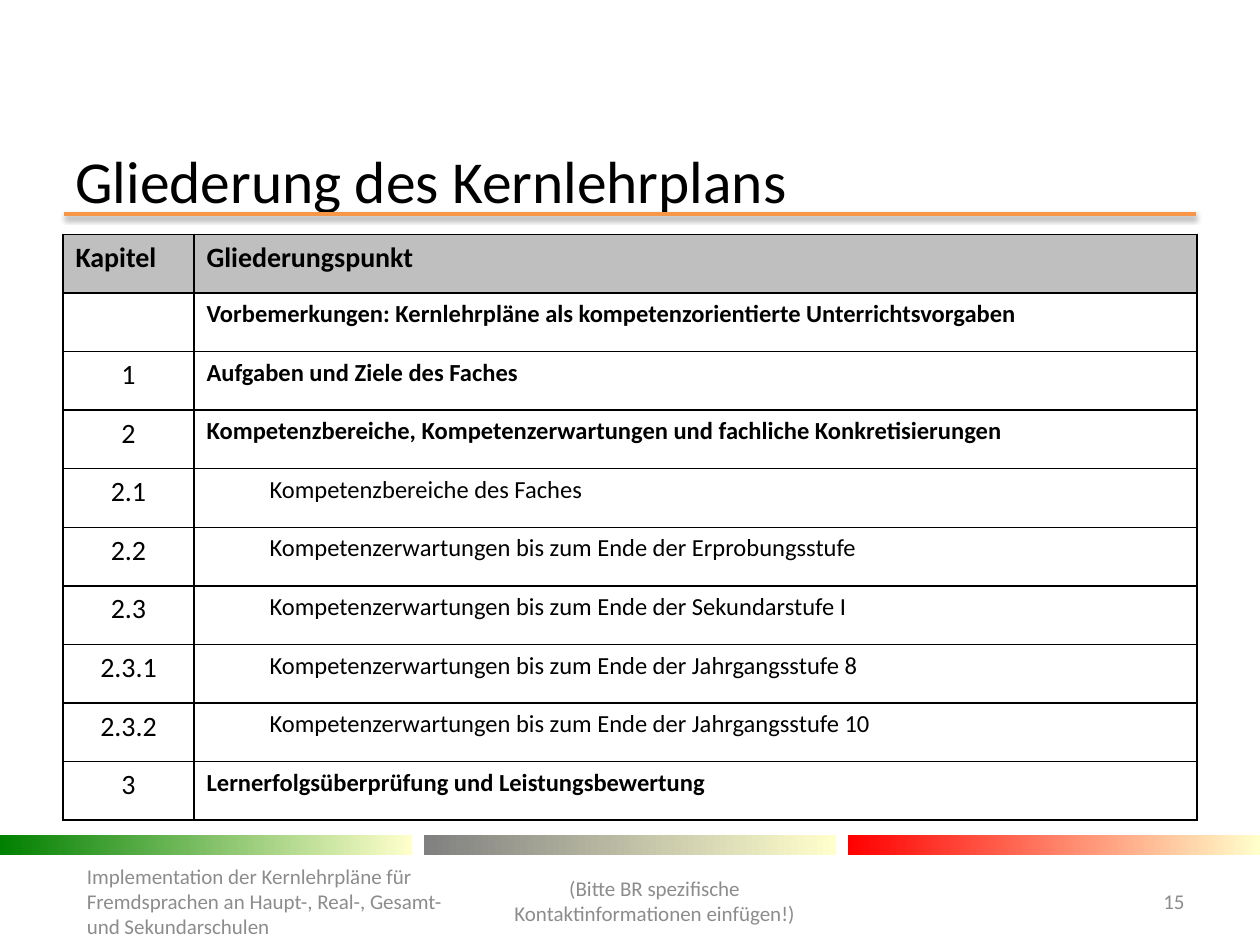
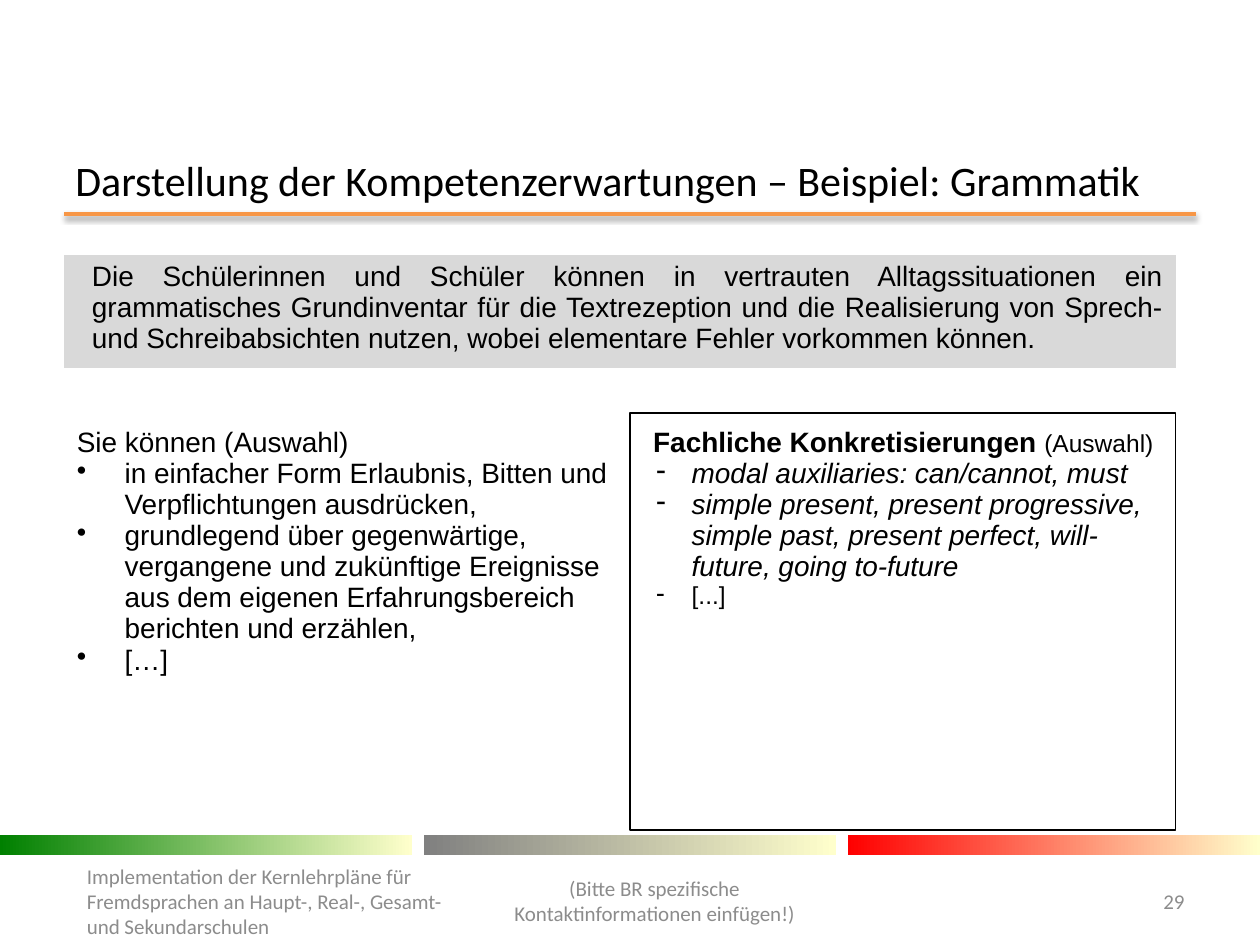
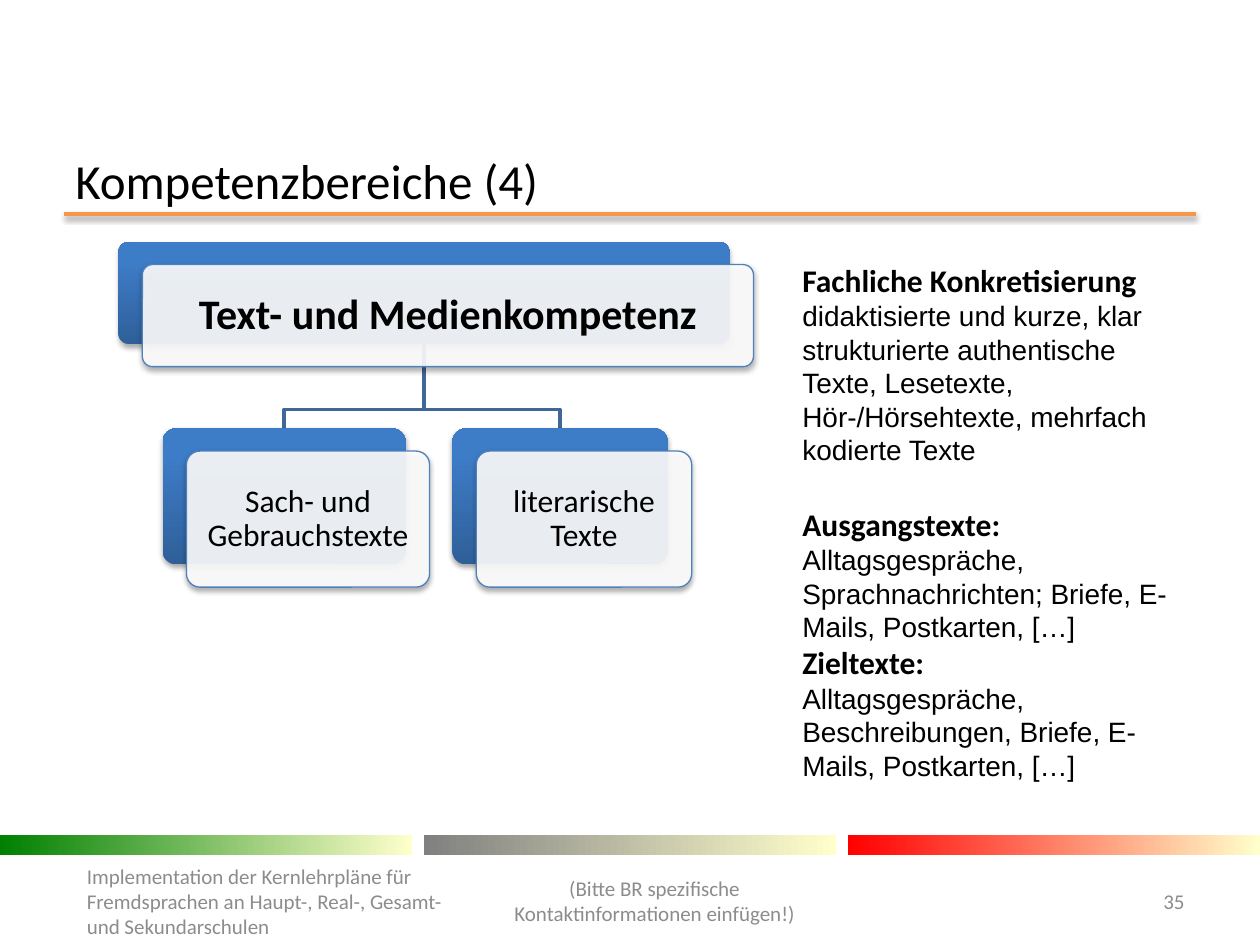
from collections import namedtuple

from lxml import etree
from pptx import Presentation
from pptx import util as u
from pptx.dml import color
from pptx.enum import shapes, text
from pptx.oxml import ns

Box = namedtuple("Box", "x y w h")

# Grid: 100 columns by 75 rows
prs = Presentation()
prs.slide_width, prs.slide_height = u.Inches(10), u.Inches(7.5)
COL, ROW = prs.slide_width / 100, prs.slide_height / 75

BLACK, WHITE, MUTED = "000000", "FFFFFF", "8C8C8C"
ACCENT, EDGE, BRANCH = "F79646", "4F81BD", "3F6797"
HEAD_FILL, QUOTE_FILL = "BFBFBF", "D9D9D9"
CARD_DARK, CARD_LIGHT = "2F5F99", "3D7CC7"
BAND_COLORS, BAND_END = ("008000", "808080", "FF0000"), "FFFFCC"
LEFT, CENTER, RIGHT, JUSTIFY = (
    text.PP_ALIGN.LEFT, text.PP_ALIGN.CENTER, text.PP_ALIGN.RIGHT, text.PP_ALIGN.JUSTIFY)
PLAIN_TABLE = "{2D5ABB26-0587-4C30-8999-92F81FD0307C}"
FOOTER = ("Implementation der Kernlehrpläne für Fremdsprachen an Haupt-, Real-, "
          "Gesamt- und Sekundarschulen")
CONTACT = "(Bitte BR spezifische Kontaktinformationen einfügen!)"


def rgb(value):
    return color.RGBColor.from_string(value)


def emu(box):
    return [round(n) for n in (box.x * COL, box.y * ROW, box.w * COL, box.h * ROW)]


def element(parent, tag, **attrs):
    return etree.SubElement(parent, ns.qn(tag), {k: str(v) for k, v in attrs.items()})


def set_shadow(sp, alpha=None):
    """Remove the theme shadow, or replace it with a soft one below the shape."""
    effects = element(sp._element.spPr, "a:effectLst")
    if alpha:
        shadow = element(effects, "a:outerShdw", blurRad=u.Pt(3.1), dist=u.Pt(1.7),
                         dir=5400000, rotWithShape=0)
        tint = element(shadow, "a:srgbClr", val=BLACK)
        element(tint, "a:alpha", val=alpha * 1000)


def add_shape(slide, box, kind=shapes.MSO_SHAPE.RECTANGLE, line=None, width=1):
    sp = slide.shapes.add_shape(kind, *emu(box))
    sp.fill.background()
    if line:
        sp.line.color.rgb, sp.line.width = rgb(line), u.Pt(width)
    else:
        sp.line.fill.background()
    return sp


def set_gradient(sp, start, end, angle=0, end_at=1):
    sp.fill.gradient()
    sp.fill.gradient_angle = angle
    first, last = sp.fill.gradient_stops
    first.color.rgb, last.color.rgb = rgb(start), rgb(end)
    first.position, last.position = 0, end_at


def write(p, words, size, font="Calibri", bold=False, italic=False, tint=BLACK, align=None):
    r = p.add_run()
    r.text = words
    r.font.size, r.font.name, r.font.color.rgb = u.Pt(size), font, rgb(tint)
    r.font.bold, r.font.italic = bold, italic
    if align is not None:
        p.alignment = align


def indent(p, left, hang=0, bullet=None):
    pPr = p._p.get_or_add_pPr()
    pPr.set("marL", str(u.Inches(left)))
    pPr.set("indent", str(u.Inches(-hang)))
    if bullet:
        element(pPr, "a:buChar", char=bullet)


def add_text(slide, box, anchor=text.MSO_ANCHOR.MIDDLE):
    tf = slide.shapes.add_textbox(*emu(box)).text_frame
    tf.word_wrap = True
    tf.vertical_anchor = anchor
    return tf


def add_table(slide, box, widths, heights):
    tbl = slide.shapes.add_table(len(heights), len(widths), *emu(box)).table
    tbl._tbl.tblPr.find(ns.qn("a:tableStyleId")).text = PLAIN_TABLE
    tbl.first_row = tbl.horz_banding = False
    for col, w in zip(tbl.columns, widths):
        col.width = round(w * COL)
    for row, h in zip(tbl.rows, heights):
        row.height = round(h * ROW)
    return tbl


def set_cell(cell, fill=None, border=None):
    if border:
        for side in "LRTB":
            ln = element(cell._tc.get_or_add_tcPr(), "a:ln" + side, w=u.Pt(1))
            element(element(ln, "a:solidFill"), "a:srgbClr", val=border)
    if fill:
        cell.fill.solid()
        cell.fill.fore_color.rgb = rgb(fill)
    else:
        cell.fill.background()


def title_bar(slide, box, title, size):
    write(add_text(slide, box).paragraphs[0], title, size)
    y = round((box.y + box.h + 0.8) * ROW)
    rule = slide.shapes.add_connector(
        shapes.MSO_CONNECTOR.STRAIGHT, round((box.x + 0.1) * COL), y,
        round((box.x + box.w - 0.1) * COL), y)
    rule.line.color.rgb, rule.line.width = rgb(ACCENT), u.Pt(2)
    set_shadow(rule, 38)


def footer(slide, box, number):
    """Three colour bands above the footer, contact and page number."""
    width = 32.7
    step = (box.w - width) / 2
    for i, tint in enumerate(BAND_COLORS):
        band = add_shape(slide, Box(box.x + i * step, box.y, width, 1.6))
        set_gradient(band, tint, BAND_END)
        set_shadow(band)
    for x, y, w, h, words, align in (
            (5.9, 1.8, 31.5, 6.8, FOOTER, LEFT),
            (37.4, 1.6, 29.1, 7.1, CONTACT, CENTER),
            (88.6, 3.2, 6.4, 4, str(number), RIGHT)):
        tf = add_text(slide, Box(box.x + x, box.y + y, w, h))
        write(tf.paragraphs[0], words, 12, tint=MUTED, align=align)


def new_slide(title, size, number):
    slide = prs.slides.add_slide(prs.slide_layouts[6])
    title_bar(slide, Box(5, 12.3, 90, 3.9), title, size)
    footer(slide, Box(0, 66.3, 100, 8.7), number)
    return slide


def outline_table(slide, box, rows):
    chapter_w = 10.4
    tbl = add_table(slide, box, [chapter_w, box.w - chapter_w], [box.h / len(rows)] * len(rows))
    for i, (chapter, topic) in enumerate(rows):
        head, sub = i == 0, "." in chapter
        cells = tbl.cell(i, 0), tbl.cell(i, 1)
        for cell in cells:
            set_cell(cell, HEAD_FILL if head else None, BLACK)
        first, second = (cell.text_frame.paragraphs[0] for cell in cells)
        if chapter:
            write(first, chapter, 16, bold=head, align=LEFT if head else CENTER)
        if sub:
            indent(second, 0.5)
        write(second, topic, 16 if head else 14, bold=not sub)


def example_table(slide, box, quote, skills, details):
    left_w = 45
    heights = [8.4, 4.2, box.h - 12.6]
    tbl = add_table(slide, box, [left_w, box.w - left_w], heights)
    for cell in tbl.iter_cells():
        set_cell(cell)
    for row, fill in enumerate((QUOTE_FILL, WHITE)):
        tbl.cell(row, 0).merge(tbl.cell(row, 1))
        set_cell(tbl.cell(row, 0), fill)
    p = tbl.cell(0, 0).text_frame.paragraphs[0]
    indent(p, 0.12)
    write(p, quote, 16, "Arial", align=JUSTIFY)

    tf = tbl.cell(2, 0).text_frame
    write(tf.paragraphs[0], "Sie können (Auswahl)", 16, "Arial")
    for skill in skills:
        p = tf.add_paragraph()
        indent(p, 0.38, 0.38, "•")
        write(p, skill, 16, "Arial")

    tf = tbl.cell(2, 1).text_frame
    p = tf.paragraphs[0]
    write(p, "Fachliche Konkretisierungen ", 16, "Arial", bold=True, align=CENTER)
    write(p, "(Auswahl)", 14, "Arial")
    for detail in details:
        p = tf.add_paragraph()
        indent(p, 0.38, 0.28, "-")
        omitted = detail == "[...]"
        write(p, detail, 14 if omitted else 16, "Arial", italic=not omitted)

    frame = Box(box.x + left_w - 0.1, box.y + 12.6, box.w - left_w + 0.1, 33.1)
    set_shadow(add_shape(slide, frame, line=BLACK))


def card(slide, box, label, size, bold=False):
    """A blue plate with a translucent labelled plate in front of it."""
    kind = shapes.MSO_SHAPE.ROUNDED_RECTANGLE
    back = add_shape(slide, box, kind)
    set_gradient(back, CARD_DARK, CARD_LIGHT, 90, 0.8)
    front = add_shape(slide, box._replace(x=box.x + 1.9, y=box.y + 1.8), kind, EDGE, 0.75)
    front.fill.solid()
    front.fill.fore_color.rgb = rgb(WHITE)
    tint = front._element.spPr.find(ns.qn("a:solidFill"))[0]
    element(tint, "a:alpha", val=90000)
    for sp in (back, front):
        sp.adjustments[0] = 0.1
        set_shadow(sp, 35)
    tf = front.text_frame
    tf.word_wrap = True
    tf.vertical_anchor = text.MSO_ANCHOR.MIDDLE
    p = tf.paragraphs[0]
    p.line_spacing = 0.9
    write(p, label, size, bold=bold, align=CENTER)


def competence_tree(slide, box, root, children):
    """Root card across the box, child cards (offset, width, label) at its foot."""
    root_h, child_h = 8.1, 10.8
    middle, top = box.x + box.w / 2, box.y + root_h
    child_y = box.y + box.h - child_h
    for offset, width, _ in children:
        x = box.x + offset + width / 2
        path = slide.shapes.build_freeform(round(middle * COL), round(top * ROW))
        path.add_line_segments(
            [(round(a * COL), round(b * ROW)) for a, b in
             ((middle, child_y - 1.5), (x, child_y - 1.5), (x, child_y))], close=False)
        branch = path.convert_to_shape()
        branch.fill.background()
        branch.line.color.rgb, branch.line.width = rgb(BRANCH), u.Pt(2)
        set_shadow(branch)
    card(slide, box._replace(h=root_h), root, 24, bold=True)
    for offset, width, label in children:
        card(slide, Box(box.x + offset, child_y, width, child_h), label, 18)


def side_notes(slide, box, notes):
    tf = add_text(slide, box, text.MSO_ANCHOR.TOP)
    for i, (heading, body, gap) in enumerate(notes):
        p = tf.add_paragraph() if i else tf.paragraphs[0]
        if gap:
            p.space_before = u.Pt(gap)
        write(p, heading, 18, bold=True)
        write(tf.add_paragraph(), body, 16, "Arial")


def main():
    slide = new_slide("Gliederung des Kernlehrplans", 34, 15)
    outline_table(slide, Box(5, 18.6, 90, 46.5), [
        ("Kapitel", "Gliederungspunkt"),
        ("", "Vorbemerkungen: Kernlehrpläne als kompetenzorientierte Unterrichtsvorgaben"),
        ("1", "Aufgaben und Ziele des Faches"),
        ("2", "Kompetenzbereiche, Kompetenzerwartungen und fachliche Konkretisierungen"),
        ("2.1", "Kompetenzbereiche des Faches"),
        ("2.2", "Kompetenzerwartungen bis zum Ende der Erprobungsstufe"),
        ("2.3", "Kompetenzerwartungen bis zum Ende der Sekundarstufe I"),
        ("2.3.1", "Kompetenzerwartungen bis zum Ende der Jahrgangsstufe 8"),
        ("2.3.2", "Kompetenzerwartungen bis zum Ende der Jahrgangsstufe 10"),
        ("3", "Lernerfolgsüberprüfung und Leistungsbewertung")])

    slide = new_slide("Darstellung der Kompetenzerwartungen – Beispiel: Grammatik", 24, 29)
    example_table(
        slide, Box(5.1, 20.2, 88.2, 49.5),
        "Die Schülerinnen und Schüler können in vertrauten Alltagssituationen ein "
        "grammatisches Grundinventar für die Textrezeption und die Realisierung von "
        "Sprech- und Schreibabsichten nutzen, wobei elementare Fehler vorkommen können.",
        ["in einfacher Form Erlaubnis, Bitten und Verpflichtungen ausdrücken,",
         "grundlegend über gegenwärtige, vergangene und zukünftige Ereignisse aus dem "
         "eigenen Erfahrungsbereich berichten und erzählen,",
         "[…]"],
        ["modal auxiliaries: can/cannot, must",
         "simple present, present progressive, simple past, present perfect, "
         "will-future, going to-future",
         "[...]"])

    slide = new_slide("Kompetenzbereiche (4)", 28, 35)
    competence_tree(slide, Box(9.4, 19.2, 48.5, 25.6), "Text- und Medienkompetenz",
                    [(3.5, 19.3, "Sach- und Gebrauchstexte"), (26.5, 17.1, "literarische Texte")])
    side_notes(slide, Box(62.7, 20.2, 32.4, 46.4), [
        ("Fachliche Konkretisierung",
         "didaktisierte und kurze, klar strukturierte authentische Texte, Lesetexte, "
         "Hör-/Hörsehtexte, mehrfach kodierte Texte", 0),
        ("Ausgangstexte:",
         "Alltagsgespräche, Sprachnachrichten; Briefe, E-Mails, Postkarten, […]", 22),
        ("Zieltexte:",
         "Alltagsgespräche, Beschreibungen, Briefe, E-Mails, Postkarten, […]", 0)])

    prs.save("out.pptx")


if __name__ == "__main__":
    main()
